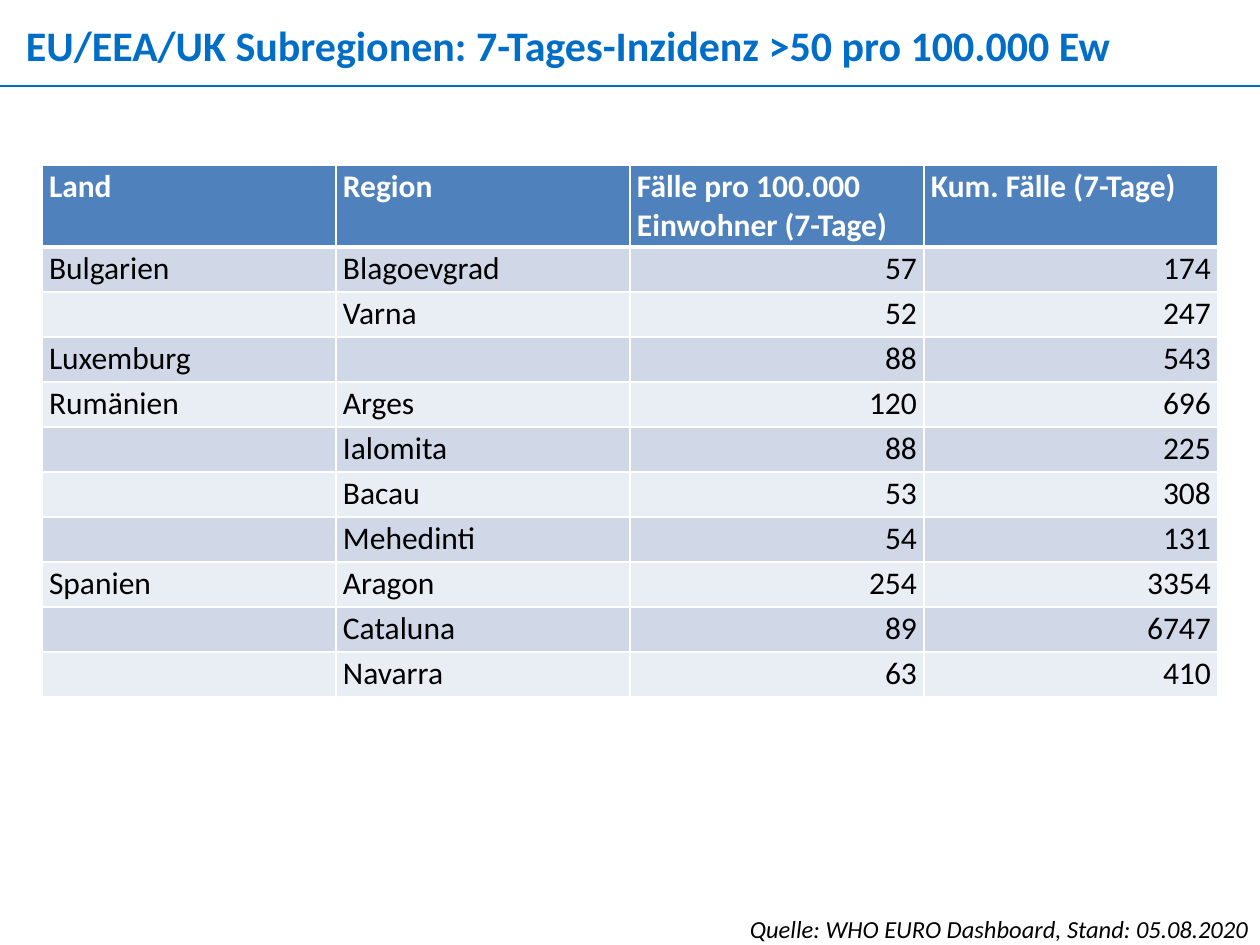
from lxml.etree import SubElement
from pptx import Presentation
from pptx.dml.color import RGBColor
from pptx.enum.shapes import MSO_CONNECTOR
from pptx.enum.text import PP_ALIGN
from pptx.oxml.ns import qn
from pptx.util import Emu, Pt

SCALE = 914400 // 126
FONT = "Calibri"
COLORS = {
    "blue": "006EC7",
    "head": "4F81BD",
    "dark": "D0D8E8",
    "light": "E9EDF4",
    "white": "FFFFFF",
    "black": "000000",
}
HEADS = ["Land", "Region", "Fälle pro 100.000 Einwohner (7-Tage)",
         "Kum. Fälle (7-Tage)"]
ROWS = [
    ("Bulgarien", "Blagoevgrad", 57, 174),
    ("", "Varna", 52, 247),
    ("Luxemburg", "", 88, 543),
    ("Rumänien", "Arges", 120, 696),
    ("", "Ialomita", 88, 225),
    ("", "Bacau", 53, 308),
    ("", "Mehedinti", 54, 131),
    ("Spanien", "Aragon", 254, 3354),
    ("", "Cataluna", 89, 6747),
    ("", "Navarra", 63, 410),
]


def px(n):
    return Emu(n * SCALE)


def rgb(name):
    return RGBColor.from_string(COLORS[name])


def add_run(para, text, size, color, bold=False, italic=False):
    run = para.add_run()
    run.text = text
    font = run.font
    font.name, font.size = FONT, Pt(size)
    font.bold, font.italic = bold, italic
    font.color.rgb = rgb(color)


def set_inset(item, side, top):
    item.margin_left = item.margin_right = px(side)
    item.margin_top = item.margin_bottom = px(top)


def add_text(slide, box, text, size, color, align=PP_ALIGN.LEFT,
             inset=None, **style):
    frame = slide.shapes.add_textbox(*map(px, box)).text_frame
    frame.word_wrap = True
    if inset is not None:
        set_inset(frame, inset, inset)
    para = frame.paragraphs[0]
    para.alignment = align
    add_run(para, text, size, color, **style)


def add_rule(slide, y, width):
    line = slide.shapes.add_connector(
        MSO_CONNECTOR.STRAIGHT, 0, px(y), px(width), px(y))
    line.line.color.rgb = rgb("blue")
    line.line.width = Pt(1.5)
    SubElement(line._element.spPr, qn("a:effectLst"))


def set_edges(cell, top, bottom):
    """Draw white borders; top and bottom widths are in points."""
    props = cell._tc.get_or_add_tcPr()
    widths = {"lnL": 1, "lnR": 1, "lnT": top, "lnB": bottom}
    for spot, (tag, width) in enumerate(widths.items()):
        edge = SubElement(props, qn("a:" + tag), w=str(Pt(width)))
        fill = SubElement(edge, qn("a:solidFill"))
        SubElement(fill, qn("a:srgbClr"), val=COLORS["white"])
        props.insert(spot, edge)


def fill_cell(cell, value, row):
    head = row == 0
    set_inset(cell, 7, 3)
    cell.fill.solid()
    cell.fill.fore_color.rgb = rgb(
        "head" if head else "dark" if row % 2 else "light")
    set_edges(cell, 3 if row == 1 else 1, 3 if head else 1)
    para = cell.text_frame.paragraphs[0]
    if isinstance(value, int):
        para.alignment = PP_ALIGN.RIGHT
    if value != "":
        add_run(para, str(value), 18, "white" if head else "black", bold=head)


def add_grid(slide, left, top, col, head, row):
    """Add the case table; col, head and row are its cell sizes."""
    data = [HEADS, *ROWS]
    table = slide.shapes.add_table(
        len(data), len(HEADS), px(left), px(top),
        px(col * len(HEADS)), px(head + row * len(ROWS))).table
    for column in table.columns:
        column.width = px(col)
    for r, values in enumerate(data):
        table.rows[r].height = px(row if r else head)
        for c, value in enumerate(values):
            fill_cell(table.cell(r, c), value, r)


def main():
    deck = Presentation()
    deck.slide_width, deck.slide_height = px(1260), px(945)
    slide = deck.slides.add_slide(deck.slide_layouts[6])
    add_text(slide, (26, 20, 1213, 50),
             "EU/EEA/UK Subregionen: 7-Tages-Inzidenz >50 pro 100.000 Ew",
             24, "blue", inset=0, bold=True)
    add_rule(slide, 86, 1260)
    add_text(slide, (679, 908, 582, 43),
             "Quelle: WHO EURO Dashboard, Stand: 05.08.2020",
             14, "black", PP_ALIGN.RIGHT, italic=True)
    add_grid(slide, 42, 165, 294, 82, 45)
    deck.save("out.pptx")


if __name__ == "__main__":
    main()
